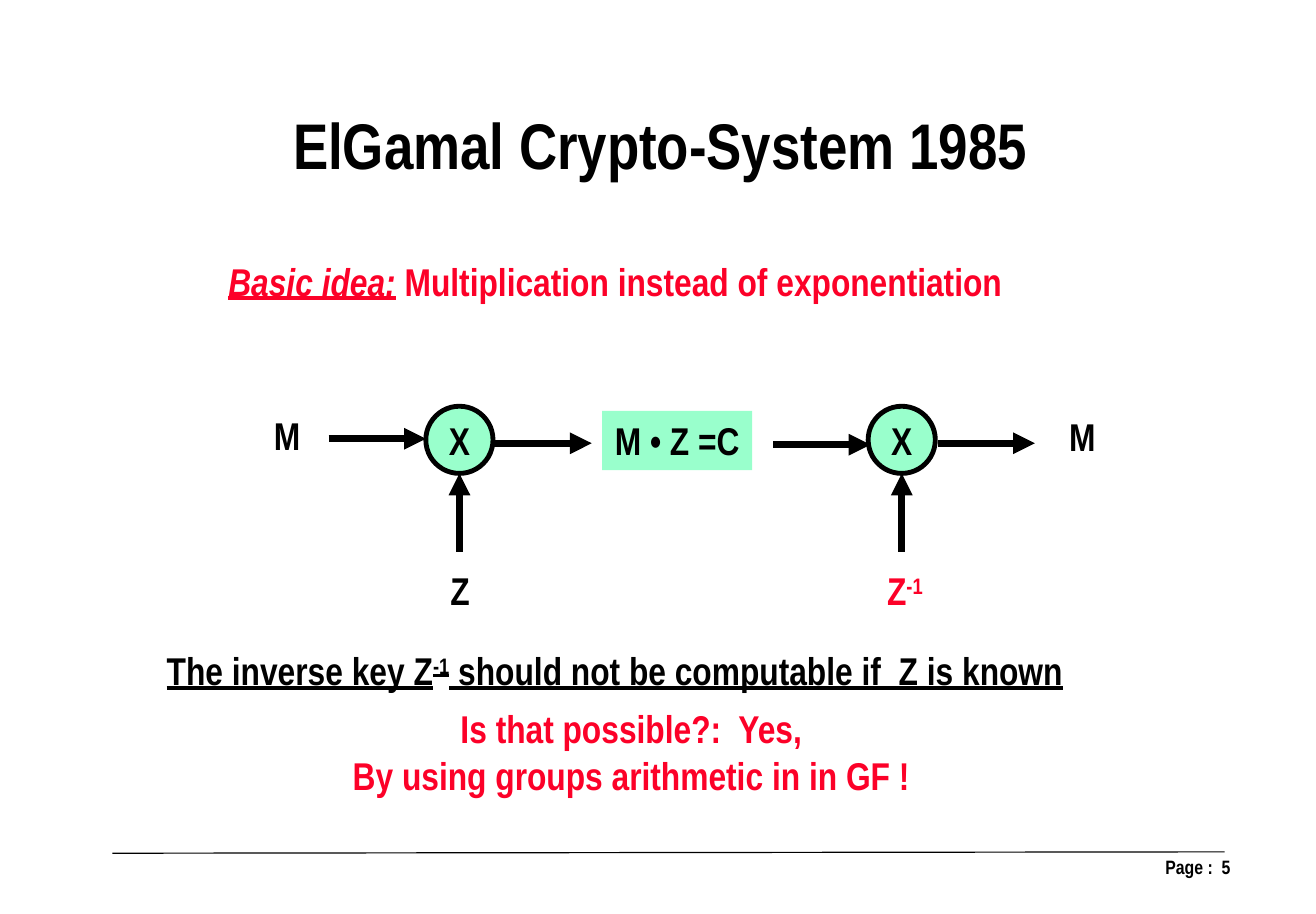
"""Build the slide on the basic idea of the ElGamal crypto-system."""
from lxml import etree
from pptx import Presentation
from pptx.dml.color import RGBColor
from pptx.enum.shapes import MSO_CONNECTOR, MSO_SHAPE
from pptx.enum.text import MSO_ANCHOR, MSO_AUTO_SIZE, PP_ALIGN
from pptx.oxml.ns import qn
from pptx.util import Cm, Pt

BLACK = RGBColor(0x00, 0x00, 0x00)
RED = RGBColor(0xFC, 0x01, 0x28)
MINT = RGBColor(0x99, 0xFF, 0xCC)
STRAIGHT = MSO_CONNECTOR.STRAIGHT
OVAL = MSO_SHAPE.OVAL
TOP, MIDDLE = MSO_ANCHOR.TOP, MSO_ANCHOR.MIDDLE
LEFT, CENTER, RIGHT = PP_ALIGN.LEFT, PP_ALIGN.CENTER, PP_ALIGN.RIGHT
NO_AUTOFIT = MSO_AUTO_SIZE.NONE


def write_text(shape, lines, size=24, color=BLACK, align=CENTER, anchor=MIDDLE):
    """Fill a shape with lines, each a list of (text, styles) runs."""
    frame = shape.text_frame
    frame.word_wrap = False
    frame.auto_size = NO_AUTOFIT
    frame.vertical_anchor = anchor
    for index, runs in enumerate(lines):
        paragraph = frame.add_paragraph() if index else frame.paragraphs[0]
        paragraph.alignment = align
        for text, styles in runs:
            run = paragraph.add_run()
            run.text = text
            run.font.name = "Arial Narrow"
            run.font.size = Pt(size)
            run.font.bold = True
            run.font.color.rgb = color
            run.font.italic = "italic" in styles
            run.font.underline = "underline" in styles
            if "superscript" in styles:
                run.font._element.set("baseline", "30000")


def add_line(start, end, width, arrow=True):
    """Draw a black line between two points, with an arrowhead if wanted."""
    connector = slide.shapes.add_connector(STRAIGHT, *map(Cm, start + end))
    connector.line.color.rgb = BLACK
    connector.line.width = Pt(width)
    if arrow:
        etree.SubElement(connector.line._get_or_add_ln(), qn("a:tailEnd"), type="triangle")
    etree.SubElement(connector._element.spPr, qn("a:effectLst"))


presentation = Presentation()
presentation.slide_width = Cm(28.8)
presentation.slide_height = Cm(20)
slide = presentation.slides.add_slide(presentation.slide_layouts[5])

title = slide.shapes.title
title.left, title.top, title.width, title.height = map(Cm, (6.15, 2.18, 16.59, 1.96))
write_text(title, [[("ElGamal Crypto-System 1985", "")]], size=40, anchor=TOP)

add_line((2.46, 18.67), (26.8, 18.64), 0.75, arrow=False)
page = slide.shapes.add_textbox(Cm(20.68), Cm(18.57), Cm(6.55), Cm(1.32))
write_text(page, [[("Page :  5", "")]], size=12, align=RIGHT, anchor=TOP)
page.text_frame.word_wrap = True
page.text_frame.margin_left = page.text_frame.margin_right = Cm(0.3)
page.text_frame.margin_top = page.text_frame.margin_bottom = Cm(0.15)

DIAMETER = 1.47
for multiplier_left in (9.32, 19):
    multiplier = slide.shapes.add_shape(
        OVAL, Cm(multiplier_left), Cm(8.89), Cm(DIAMETER), Cm(DIAMETER))
    multiplier.shadow.inherit = False
    multiplier.fill.solid()
    multiplier.fill.fore_color.rgb = MINT
    multiplier.line.color.rgb = BLACK
    multiplier.line.width = Pt(3)
    write_text(multiplier, [[("X", "")]])
    middle = multiplier_left + DIAMETER / 2
    add_line((middle, 12.07), (middle, 10.36), 4.5)

for arrow_left, arrow_top in ((7.19, 9.6), (10.82, 9.7), (16.92, 9.73), (20.52, 9.7)):
    add_line((arrow_left, arrow_top), (arrow_left + 2.13, arrow_top), 4.5)

labels = [
    ((5.74, 8.86, 1.09, 1.3), BLACK, CENTER, [[("M", "")]]),
    ((9.6, 12.27, 0.94, 1.3), BLACK, CENTER, [[("Z", "")]]),
    ((13.18, 8.99, 3.28, 1.3), BLACK, CENTER, [[("M • Z =C", "")]]),
    ((19.13, 12.27, 1.35, 1.3), RED, CENTER, [[("Z", ""), ("-1", "superscript")]]),
    ((23.14, 8.89, 1.09, 1.3), BLACK, CENTER, [[("M", "")]]),
    ((4.65, 5.49, 17.63, 1.3), RED, CENTER,
     [[("Basic idea:", "italic underline"), (" ", "italic"),
       ("Multiplication instead of exponentiation", "")]]),
    ((3.4, 14.02, 20.19, 1.3), BLACK, LEFT,
     [[("The inverse key Z", "underline"), ("-1", "underline superscript"),
       (" should not be computable if  Z is known", "underline")]]),
    ((7.39, 15.29, 12.85, 2.31), RED, CENTER,
     [[("Is that possible?:  Yes,", "")],
      [("By using groups arithmetic in in GF !", "")]]),
]
for box, color, align, lines in labels:
    label = slide.shapes.add_textbox(*map(Cm, box))
    write_text(label, lines, color=color, align=align)
    if lines[0][0][0] == "M • Z =C":
        label.fill.solid()
        label.fill.fore_color.rgb = MINT

presentation.save("out.pptx")
